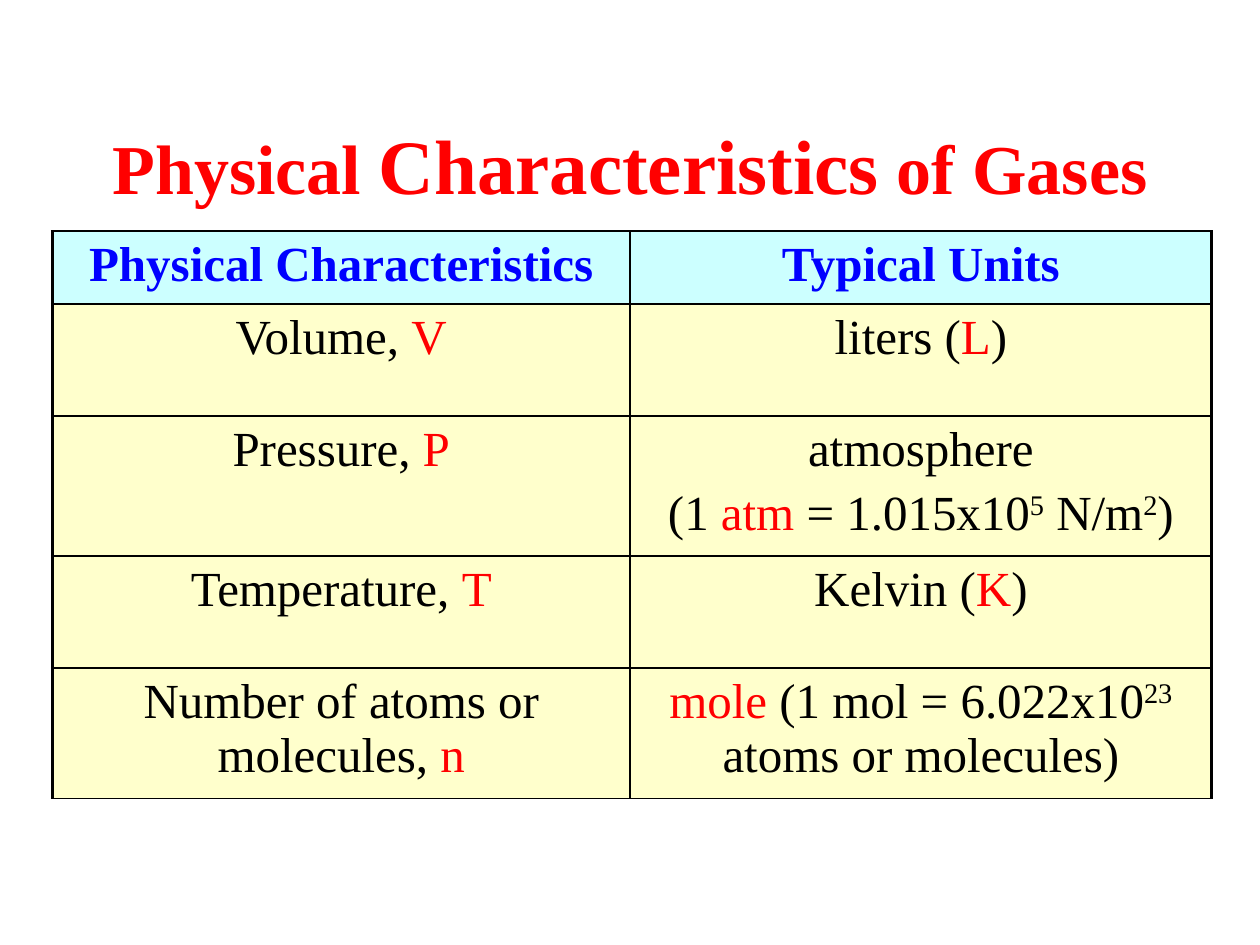
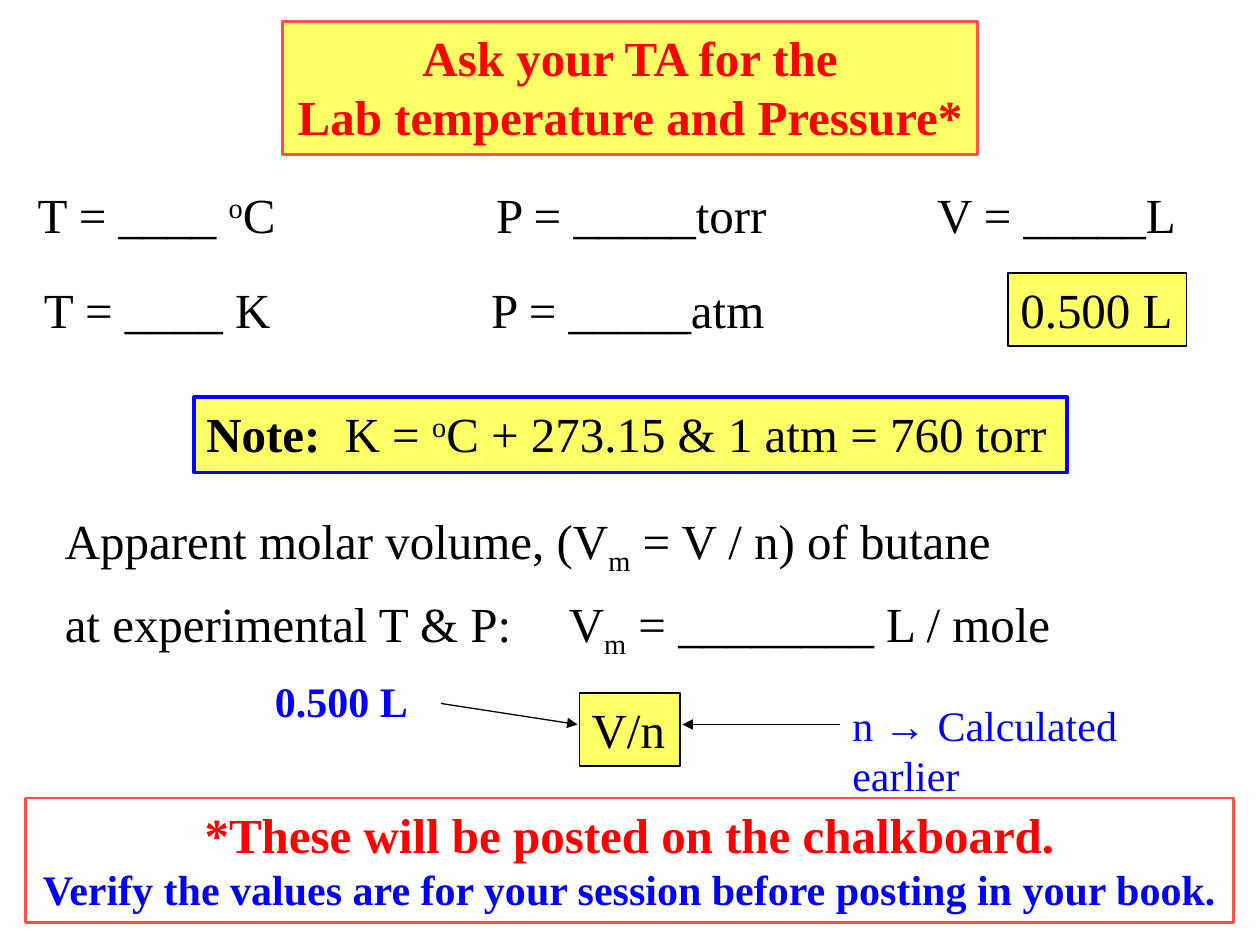
import pptx
import pptx.util
import pptx.dml.color
import pptx.enum.shapes
import pptx.enum.text
import pptx.oxml
import pptx.oxml.ns
from lxml import etree

Pt = pptx.util.Pt
RGB = pptx.dml.color.RGBColor
ALIGN = pptx.enum.text.PP_ALIGN
ANCHOR = pptx.enum.text.MSO_ANCHOR

RED = RGB(0xFF, 0x00, 0x00)
BLUE = RGB(0x00, 0x00, 0xFF)
BLACK = RGB(0x00, 0x00, 0x00)
CORAL = RGB(0xFF, 0x50, 0x50)
YELLOW = RGB(0xFF, 0xFF, 0x66)
CREAM = RGB(0xFF, 0xFF, 0xCC)
AQUA = RGB(0xCC, 0xFF, 0xFF)

BODY = {"name": "Times New Roman", "size": Pt(28), "bold": False, "color": BLACK}
HEADING = {**BODY, "bold": True, "color": RED}
COLUMN_HEAD = {**BODY, "bold": True, "color": BLUE}
HINT = {**BODY, "size": Pt(24), "color": BLUE}
IN_RED = {"color": RED}
SUPER = {"baseline": 30000}
SUB = {"baseline": -25000}


def add_run(paragraph, text, style):
    run = paragraph.add_run()
    run.text = text
    for key, value in style.items():
        if key == "color":
            run.font.color.rgb = value
        elif key == "baseline":
            run.font._element.set(key, str(value))
        else:
            setattr(run.font, key, value)


def write(frame, paragraphs, style, align=ALIGN.LEFT, gap=0, tabs=()):
    for index, parts in enumerate(paragraphs):
        paragraph = frame.add_paragraph() if index else frame.paragraphs[0]
        paragraph.alignment = align
        if index and gap:
            paragraph.space_before = Pt(gap)
        if tabs:
            stops = etree.SubElement(paragraph._p.get_or_add_pPr(), pptx.oxml.ns.qn("a:tabLst"))
            for stop in tabs:
                etree.SubElement(stops, pptx.oxml.ns.qn("a:tab"), pos=str(Pt(stop)), algn="l")
        for part in parts:
            text, change = (part, {}) if isinstance(part, str) else part
            add_run(paragraph, text, {**style, **change})


def add_text(slide, box, paragraphs, style=BODY, wrap=True, **layout):
    label = slide.shapes.add_textbox(*map(Pt, box))
    label.text_frame.word_wrap = wrap
    write(label.text_frame, paragraphs, style, **layout)
    return label


def add_panel(slide, box, paragraphs, border, weight, fill=YELLOW, style=BODY, wrap=False, **layout):
    panel = slide.shapes.add_shape(pptx.enum.shapes.MSO_SHAPE.RECTANGLE, *map(Pt, box))
    panel.shadow.inherit = False
    if fill is None:
        panel.fill.background()
    else:
        panel.fill.solid()
        panel.fill.fore_color.rgb = fill
    panel.line.color.rgb = border
    panel.line.width = Pt(weight)
    panel.text_frame.word_wrap = wrap
    panel.text_frame.vertical_anchor = ANCHOR.TOP
    write(panel.text_frame, paragraphs, style, **layout)


def add_arrow(slide, start, end):
    arrow = slide.shapes.add_connector(
        pptx.enum.shapes.MSO_CONNECTOR.STRAIGHT, *map(Pt, start + end))
    arrow.line.color.rgb = BLACK
    arrow.line.width = Pt(0.75)
    etree.SubElement(arrow.line._get_or_add_ln(), pptx.oxml.ns.qn("a:tailEnd"), type="triangle")
    etree.SubElement(arrow._element.spPr, pptx.oxml.ns.qn("a:effectLst"))


def border_cell(cell, weights):
    properties = cell._tc.get_or_add_tcPr()
    for side, weight in weights.items():
        edge = etree.SubElement(properties, pptx.oxml.ns.qn(f"a:ln{side}"), w=str(Pt(weight)))
        paint = etree.SubElement(edge, pptx.oxml.ns.qn("a:solidFill"))
        etree.SubElement(paint, pptx.oxml.ns.qn("a:srgbClr"), val=str(BLACK))


def add_units_table(slide, left, top):
    widths = [330, 332.5]
    heights = [41.8, 64, 80, 64, 74.6]
    rows = [
        [[["Physical Characteristics"]], [["Typical Units"]]],
        [[["Volume, ", ("V", IN_RED)]], [["liters (", ("L", IN_RED), ")"]]],
        [[["Pressure, ", ("P", IN_RED)]],
         [["atmosphere"],
          ["(1 ", ("atm", IN_RED), " = 1.015x10", ("5", SUPER), " N/m", ("2", SUPER), ")"]]],
        [[["Temperature, ", ("T", IN_RED)]], [["Kelvin (", ("K", IN_RED), ")"]]],
        [[["Number of atoms or molecules, ", ("n", IN_RED)]],
         [[("mole ", IN_RED), "(1 mol = 6.022x10", ("23", SUPER), " atoms or molecules)"]]],
    ]
    table = slide.shapes.add_table(
        len(rows), len(widths), Pt(left), Pt(top), Pt(sum(widths)), Pt(sum(heights))).table
    for column, width in zip(table.columns, widths):
        column.width = Pt(width)
    for r, (height, row) in enumerate(zip(heights, rows)):
        table.rows[r].height = Pt(height)
        for c, content in enumerate(row):
            cell = table.cell(r, c)
            border_cell(cell, {"L": 1 if c else 2.25, "R": 2.25 if c else 1, "T": 1, "B": 1})
            cell.fill.solid()
            cell.fill.fore_color.rgb = CREAM if r else AQUA
            write(cell.text_frame, content, BODY if r else COLUMN_HEAD, ALIGN.CENTER, gap=5.6)


def build_characteristics(slide):
    title = add_text(
        slide, (36, 60, 648, 60),
        [["Physical ", ("Characteristics", {"size": Pt(44)}), " of Gases"]],
        {**HEADING, "size": Pt(40)}, align=ALIGN.CENTER)
    title.text_frame.vertical_anchor = ANCHOR.BOTTOM
    title.text_frame.margin_bottom = 0
    add_units_table(slide, 30, 132)


def add_readings(slide, left, top):
    add_text(slide, (left, top, 669.6, 41),
             [["T = ____ ", ("o", SUPER), "C\tP = _____torr\tV = _____L"]], tabs=(262, 514))
    add_text(slide, (left + 3.6, top + 54, 428, 41), [["T = ____ K\tP = _____atm"]], tabs=(255.6,))
    add_panel(slide, (left + 561.6, top + 54, 102, 41.8), [["0.500 L"]], BLACK, 0.75)


def add_molar_volume(slide, left, top):
    add_text(slide, (left, top, 581, 84),
             [["Apparent molar volume, (V", ("m", SUB), " = V / n) of butane"],
              ["at experimental T & P:\tV", ("m", SUB), " = ________ L / mole"]],
             gap=9.2, tabs=(288,))
    add_panel(slide, (left + 301, top + 108, 57.6, 41.8), [["V/n"]], BLACK, 0.75)
    add_arrow(slide, (left + 222, top + 114), (left + 300, top + 126))
    add_arrow(slide, (left + 450, top + 126), (left + 360, top + 126))
    add_text(slide, (left + 450, top + 108, 228, 36),
             [["n ", ("→ ", {"name": "Arial"}), "Calculated earlier"]], HINT)
    add_text(slide, (left + 120, top + 94.3, 91, 36), [["0.500 L"]],
             {**HINT, "bold": True}, wrap=False)


def build_lab_conditions(slide):
    add_panel(slide, (161.3, 12.2, 397.4, 76.3),
              [["Ask your TA for the"], ["Lab temperature and Pressure*"]],
              CORAL, 1.5, style=HEADING, align=ALIGN.CENTER)
    add_readings(slide, 14.4, 102)
    add_panel(slide, (110.9, 227, 499, 43),
              [[("Note:", {"bold": True}), "\tK = ", ("o", SUPER), "C + 273.15 & 1 atm = 760 torr"]],
              BLUE, 2, wrap=True, tabs=(79,))
    add_molar_volume(slide, 30, 288)
    add_panel(slide, (14.4, 456, 690.5, 71.3),
              [["*These will be posted on the chalkboard."],
               [("Verify the values are for your session before posting in your book.",
                 {"size": Pt(24), "color": BLUE})]],
              CORAL, 1.5, fill=None, style=HEADING, align=ALIGN.CENTER)


def main():
    deck = pptx.Presentation()
    deck.slide_width, deck.slide_height = Pt(720), Pt(540)
    for build in (build_characteristics, build_lab_conditions):
        build(deck.slides.add_slide(deck.slide_layouts[6]))
    deck.save("out.pptx")


if __name__ == "__main__":
    main()
